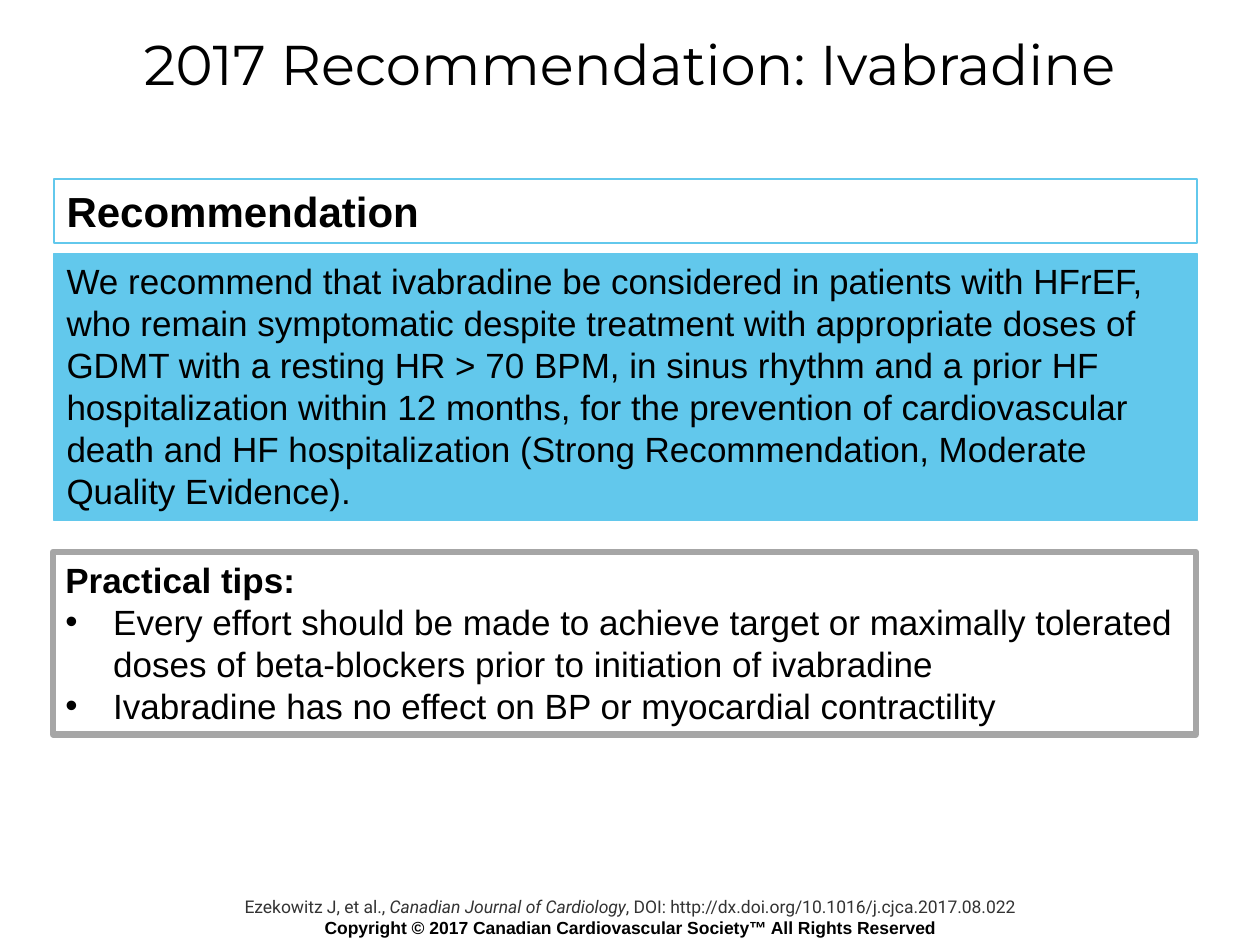
from lxml import etree
from pptx import Presentation
from pptx.dml.color import RGBColor
from pptx.enum.shapes import MSO_SHAPE as Shape
from pptx.enum.text import MSO_ANCHOR as Anchor, PP_ALIGN as Align
from pptx.oxml.ns import qn
from pptx.util import Inches, Pt

BLACK = RGBColor(0x00, 0x00, 0x00)
CHARCOAL = RGBColor(0x33, 0x33, 0x33)
SKY = RGBColor(0x62, 0xC8, 0xEC)
GREY = RGBColor(0xA6, 0xA6, 0xA6)

PANEL_LEFT, PANEL_WIDTH = 0.43, 9.07

RECOMMENDATION = (
    "We recommend that ivabradine be considered in patients with HFrEF, "
    "who remain symptomatic despite treatment with appropriate doses of "
    "GDMT with a resting HR > 70 BPM, in sinus rhythm and a prior HF "
    "hospitalization within 12 months, for the prevention of cardiovascular "
    "death and HF hospitalization (Strong Recommendation, Moderate "
    "Quality Evidence)."
)
TIPS = [
    "Every effort should be made to achieve target or maximally tolerated "
    "doses of beta-blockers prior to initiation of ivabradine",
    "Ivabradine has no effect on BP or myocardial contractility",
]


def style(paragraph, size, name="Arial", color=BLACK, bold=False, align=Align.LEFT):
    paragraph.alignment = align
    font = paragraph.font
    font.size, font.name, font.bold = Pt(size), name, bold
    font.color.rgb = color


def add_bullet(paragraph, indent):
    props = paragraph._p.get_or_add_pPr()
    props.set("marL", str(indent))
    props.set("indent", str(-indent))
    etree.SubElement(props, qn("a:buFont")).set("typeface", "Arial")
    etree.SubElement(props, qn("a:buChar")).set("char", "•")


def add_text_frame(slide, box):
    frame = slide.shapes.add_textbox(*map(Inches, box)).text_frame
    frame.word_wrap = True
    return frame


def add_panel(slide, box, line, line_width, fill=None):
    """Outlined rectangle with top-left text; returns its text frame."""
    panel = slide.shapes.add_shape(Shape.RECTANGLE, *map(Inches, box))
    panel.shadow.inherit = False
    if fill is None:
        panel.fill.background()
    else:
        panel.fill.solid()
        panel.fill.fore_color.rgb = fill
    panel.line.color.rgb = line
    panel.line.width = Pt(line_width)
    frame = panel.text_frame
    frame.word_wrap = True
    frame.vertical_anchor = Anchor.TOP
    return frame


def add_title(slide, box):
    frame = add_text_frame(slide, box)
    frame.vertical_anchor = Anchor.MIDDLE
    title = frame.paragraphs[0]
    title.text = "2017 Recommendation: Ivabradine"
    style(title, 32, "Montserrat", align=Align.CENTER)


def add_recommendation(slide, left, top, width):
    # Heading bar
    heading = add_panel(slide, (left, top, width, 0.51), SKY, 0.75).paragraphs[0]
    heading.text = "Recommendation"
    style(heading, 24, bold=True)

    # Filled statement below it
    statement_box = (left, top + 0.59, width, 2.12)
    statement = add_panel(slide, statement_box, SKY, 0.75, SKY).paragraphs[0]
    statement.text = RECOMMENDATION
    style(statement, 20)


def add_tips(slide, box):
    frame = add_panel(slide, box, GREY, 3.5)
    heading = frame.paragraphs[0]
    heading.text = "Practical tips:"
    style(heading, 20, bold=True)
    for text in TIPS:
        tip = frame.add_paragraph()
        tip.text = text
        add_bullet(tip, Inches(0.38))
        style(tip, 20)


def add_footer(slide, box):
    frame = add_text_frame(slide, box)
    citation = frame.paragraphs[0]
    for text, italic in [
        ("Ezekowitz J, et al., ", False),
        ("Canadian Journal of Cardiology", True),
        (", DOI: http://dx.doi.org/10.1016/j.cjca.2017.08.022", False),
    ]:
        part = citation.add_run()
        part.text = text
        part.font.italic = italic
    style(citation, 10, "Roboto", CHARCOAL, align=Align.CENTER)

    rights = frame.add_paragraph()
    rights.text = "Copyright © 2017 Canadian Cardiovascular Society™ All Rights Reserved"
    style(rights, 10, bold=True, align=Align.CENTER)


def main():
    deck = Presentation()
    deck.slide_width, deck.slide_height = Inches(10), Inches(7.5)
    slide = deck.slides.add_slide(deck.slide_layouts[6])
    add_footer(slide, (1.15, 7.06, 7.7, 0.44))
    add_title(slide, (0, 0.25, 10, 0.5))
    add_recommendation(slide, PANEL_LEFT, 1.42, PANEL_WIDTH)
    add_tips(slide, (PANEL_LEFT - 0.01, 4.38, PANEL_WIDTH, 1.45))
    deck.save("out.pptx")


if __name__ == "__main__":
    main()
